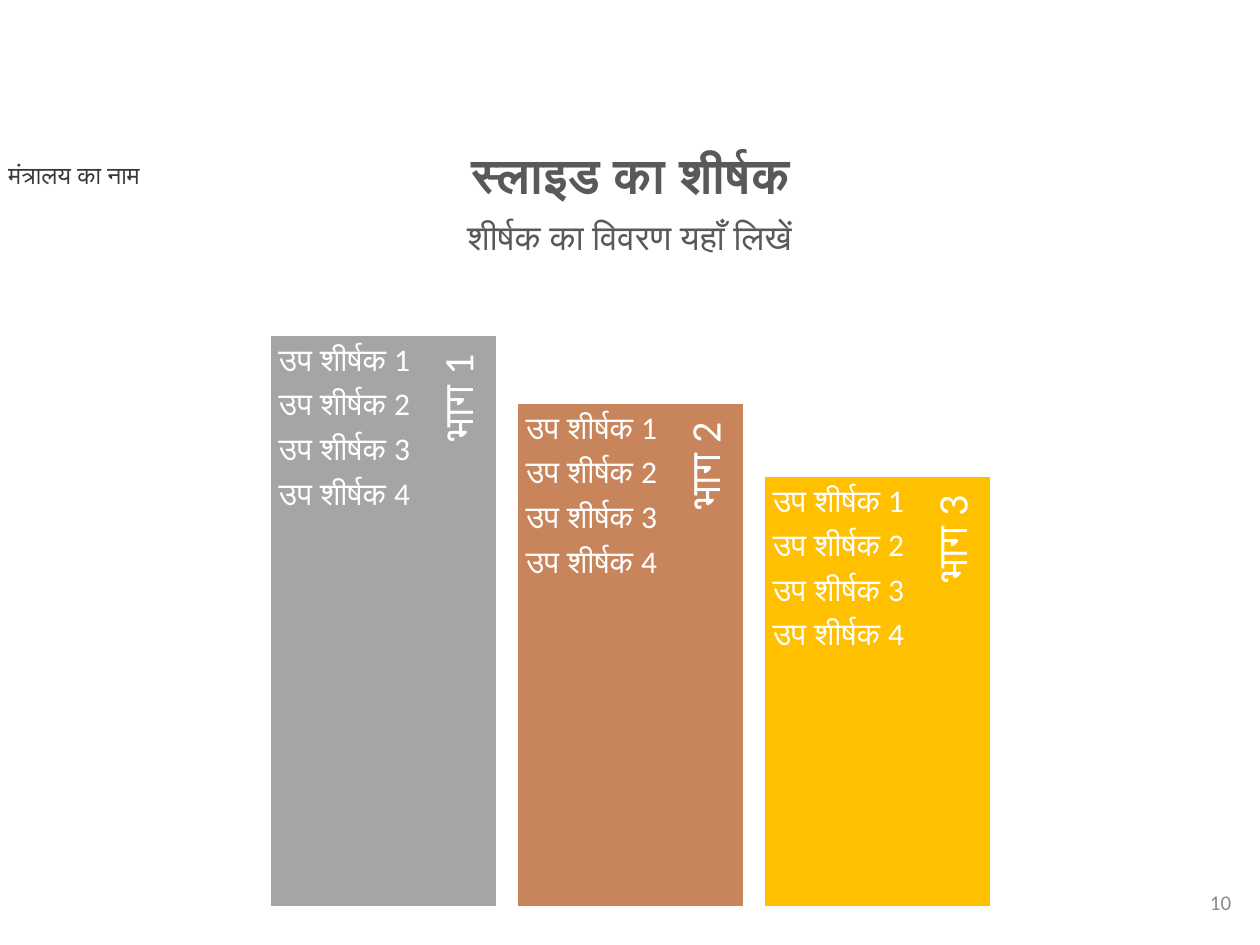
"""Build a slide with three descending section columns and their subheadings."""
from dataclasses import dataclass
from typing import Any

from pptx import Presentation
from pptx.dml.color import RGBColor
from pptx.enum import shapes, text
from pptx.util import Cm, Pt

COLORS = {
    "white": "FFFFFF",
    "grey": "A5A5A5",
    "brown": "C8855C",
    "gold": "FFC000",
    "heading": "595959",
    "ministry": "3B3838",
    "number": "8C8C8C",
}
FONT = "Calibri"
BOTTOM = 18.28
FIRST_LEFT = 5.44
STEP = 4.98
BAR_WIDTH = 4.57
LIST_WIDTH = 3.25
LABEL_CENTER = 3.87
LABEL_THICKNESS = 1.19
LABEL_SHARE = 0.9
SUBHEADINGS = [f"उप शीर्षक {number}" for number in range(1, 5)]


@dataclass(frozen=True)
class Area:
    left: float
    top: float
    width: float
    height: float

    def lengths(self) -> tuple[Cm, Cm, Cm, Cm]:
        return Cm(self.left), Cm(self.top), Cm(self.width), Cm(self.height)


@dataclass(frozen=True)
class Section:
    name: str
    top: float
    color: str


@dataclass(frozen=True)
class Style:
    size: float
    color: str
    bold: bool = False
    align: text.PP_ALIGN = text.PP_ALIGN.LEFT
    spacing: float = 1.0
    after: float = 0


SECTIONS = [
    Section("भाग 1", 6.76, "grey"),
    Section("भाग 2", 8.13, "brown"),
    Section("भाग 3", 9.6, "gold"),
]
LABEL_STYLE = Style(24, "white", align=text.PP_ALIGN.RIGHT, spacing=0.9)
LIST_STYLE = Style(18, "white", spacing=0.9, after=6)
LABEL_FRAME = {
    "vertical_anchor": text.MSO_ANCHOR.MIDDLE,
    "margin_left": Cm(0.25),
    "margin_top": Cm(0),
    "margin_right": Cm(0.38),
    "margin_bottom": Cm(0.08),
}
LIST_FRAME = {
    f"margin_{side}": Cm(0.18) for side in ("left", "top", "right", "bottom")
}


def apply(target: Any, values: dict[str, Any]) -> None:
    for name, value in values.items():
        setattr(target, name, value)


def write(box: Any, lines: list[str], style: Style, **frame_values: Any) -> None:
    frame = box.text_frame
    apply(frame, {
        "word_wrap": True,
        "auto_size": text.MSO_AUTO_SIZE.NONE,
        "vertical_anchor": text.MSO_ANCHOR.TOP,
        **frame_values,
    })
    for index, line in enumerate(lines):
        para = frame.add_paragraph() if index else frame.paragraphs[0]
        apply(para, {
            "alignment": style.align,
            "line_spacing": style.spacing,
            "space_before": Pt(0),
            "space_after": Pt(style.after),
        })
        span = para.add_run()
        span.text = line
        apply(span.font, {"name": FONT, "size": Pt(style.size), "bold": style.bold})
        span.font.color.rgb = RGBColor.from_string(COLORS[style.color])


def add_text(page: Any, area: Area, lines: list[str], style: Style, **frame: Any) -> Any:
    box = page.shapes.add_textbox(*area.lengths())
    write(box, lines, style, **frame)
    return box


def add_section(page: Any, section: Section, left: float) -> None:
    height = BOTTOM - section.top
    area = Area(left, section.top, BAR_WIDTH, height)
    bar = page.shapes.add_shape(shapes.MSO_SHAPE.RECTANGLE, *area.lengths())
    bar.shadow.inherit = False
    bar.fill.solid()
    bar.fill.fore_color.rgb = RGBColor.from_string(COLORS[section.color])
    bar.line.color.rgb = RGBColor.from_string(COLORS["white"])
    bar.line.width = Pt(1)

    length = height * LABEL_SHARE
    label_area = Area(
        left + LABEL_CENTER - length / 2,
        section.top + (length - LABEL_THICKNESS) / 2,
        length,
        LABEL_THICKNESS,
    )
    label = add_text(page, label_area, [section.name], LABEL_STYLE, **LABEL_FRAME)
    label.rotation = 270
    list_area = Area(left, section.top, LIST_WIDTH, height)
    add_text(page, list_area, SUBHEADINGS, LIST_STYLE, **LIST_FRAME)


def main() -> None:
    deck = Presentation()
    apply(deck, {"slide_width": Cm(25.4), "slide_height": Cm(19.05)})
    page = deck.slides.add_slide(deck.slide_layouts[5])

    title = page.shapes.title
    position = Area(4.72, 2.92, 15.98, 1.19).lengths()
    apply(title, dict(zip(("left", "top", "width", "height"), position)))
    center = text.PP_ALIGN.CENTER
    write(title, ["स्लाइड का शीर्षक"],
          Style(28, "heading", bold=True, align=center, spacing=0.9))
    add_text(page, Area(3.71, 4.32, 17.96, 1.6), ["शीर्षक का विवरण यहाँ लिखें"],
             Style(20, "heading", align=center, spacing=0.9))
    add_text(page, Area(-0.08, 3.1, 5.54, 0.86), ["मंत्रालय का नाम"],
             Style(14, "ministry"), auto_size=text.MSO_AUTO_SIZE.SHAPE_TO_FIT_TEXT)
    add_text(page, Area(19.35, 17.68, 5.72, 1.02), ["10"],
             Style(12, "number", align=text.PP_ALIGN.RIGHT),
             vertical_anchor=text.MSO_ANCHOR.MIDDLE)

    for index, section in enumerate(SECTIONS):
        add_section(page, section, FIRST_LEFT + index * STEP)
    deck.save("out.pptx")


if __name__ == "__main__":
    main()
